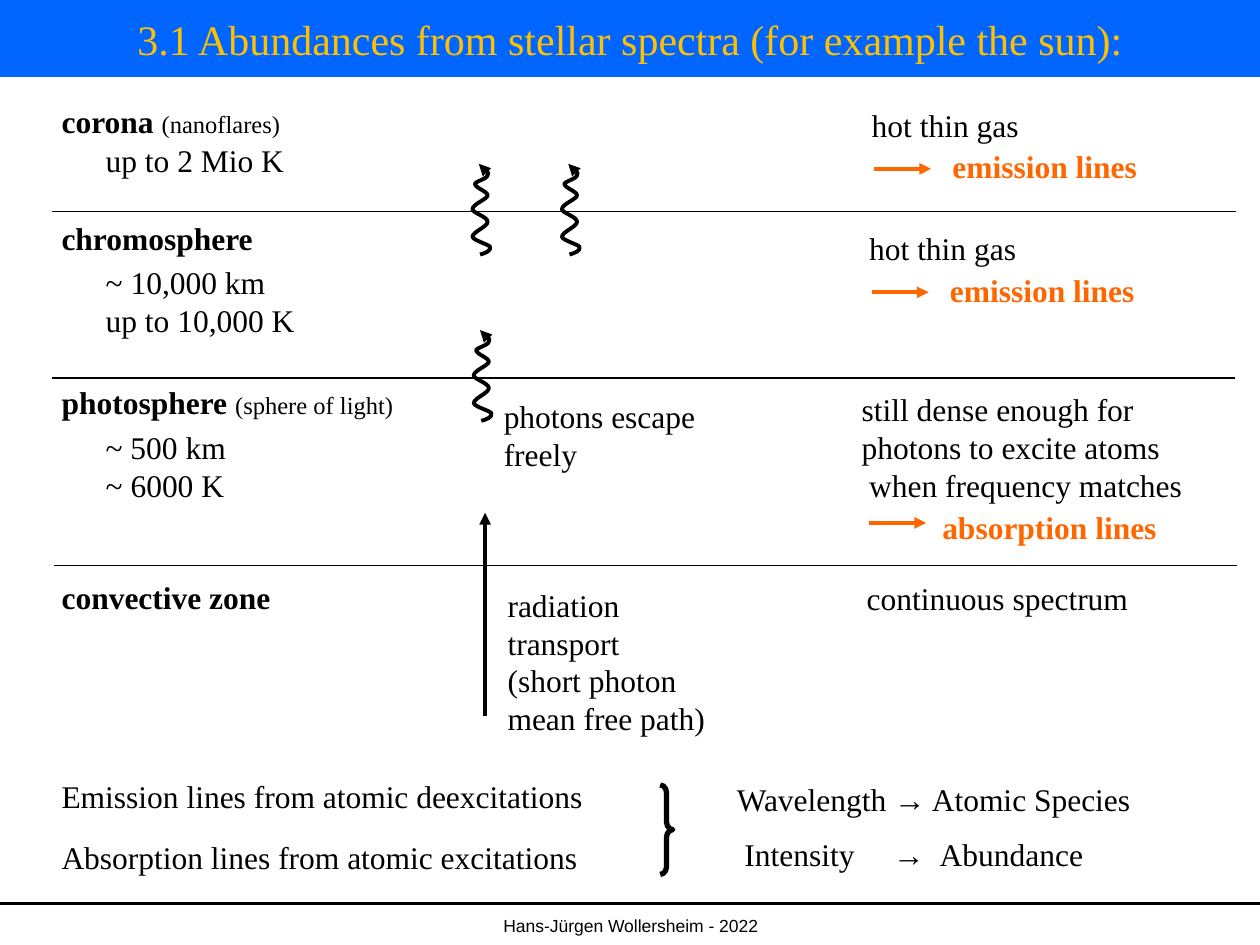
"""Build the slide on abundances from stellar spectra."""
from typing import NamedTuple

from lxml.etree import SubElement
from pptx import Presentation
from pptx.dml.color import RGBColor
from pptx.enum.shapes import MSO_CONNECTOR, MSO_SHAPE
from pptx.enum.text import MSO_ANCHOR, MSO_AUTO_SIZE, PP_ALIGN
from pptx.oxml.ns import qn
from pptx.util import Inches, Pt

SERIF = "Times New Roman"
BLACK, ORANGE = "000000", "FF6600"


class Label(NamedTuple):
    left: float
    top: float
    width: float
    text: str
    bold: bool = False
    color: str = BLACK
    note: str = ""


class Rule(NamedTuple):
    x1: float
    y1: float
    x2: float
    y2: float
    width: float = 0.75
    color: str = BLACK
    arrow: bool = False


LABELS = [
    Label(0.39, 0.76, 1.95, "corona ", True, note="(nanoflares)"),
    Label(0.39, 1.69, 1.74, "chromosphere", True),
    Label(0.39, 2.99, 2.92, "photosphere ", True, note="(sphere of light)"),
    Label(0.39, 4.54, 1.88, "convective zone", True),
    Label(0.74, 1.07, 1.67, "up to 2 Mio K"),
    Label(0.74, 2.04, 1.72, "~ 10,000 km\nup to 10,000 K"),
    Label(0.74, 3.35, 1.17, "~ 500 km"),
    Label(0.74, 3.65, 1.15, "~ 6000 K"),
    Label(3.9, 3.1, 1.74, "photons escape\vfreely"),
    Label(3.93, 4.6, 1.79, "radiation\vtransport\v(short photon\vmean free path)"),
    Label(6.82, 0.79, 1.38, "hot thin gas"),
    Label(7.46, 1.12, 1.68, "emission lines", True, ORANGE),
    Label(6.8, 1.77, 1.38, "hot thin gas"),
    Label(7.44, 2.1, 1.68, "emission lines", True, ORANGE),
    Label(7.38, 3.98, 1.92, "absorption lines", True, ORANGE),
    Label(6.78, 4.55, 2.3, "continuous spectrum"),
    Label(0.39, 6.12, 4.38, "Emission lines from atomic deexcitations"),
    Label(0.39, 6.6, 4.34, "Absorption lines from atomic excitations"),
    Label(5.75, 6.14, 3.36, "Wavelength → Atomic Species"),
]
DENSE = Label(6.74, 3.05, 2.78, "still dense enough for\vphotons to excite atoms\nwhen frequency matches")
YIELD = Label(5.81, 6.58, 2.92, "Intensity\t→\tAbundance")

RULES = [
    Rule(0, 7.17, 10, 7.17, 1.5),
    Rule(0.41, 1.68, 9.81, 1.68),
    Rule(0.41, 3, 9.8, 3),
    Rule(0.43, 4.49, 9.82, 4.49),
    Rule(3.85, 5.68, 3.85, 4.07, 2.25, arrow=True),
    Rule(6.94, 1.34, 7.39, 1.34, 2.25, ORANGE, True),
    Rule(6.92, 2.32, 7.37, 2.32, 2.25, ORANGE, True),
    Rule(6.9, 4.15, 7.35, 4.15, 2.25, ORANGE, True),
]

WAVES = [(3.76, 2.62), (3.75, 1.3), (4.46, 1.3)]
CURVE = [
    (0.06, 0.72), (0.1, 0.71), (0.15, 0.69), (0.14, 0.66),
    (0.13, 0.64), (0.01, 0.61), (0, 0.58),
    (0, 0.54), (0.12, 0.5), (0.12, 0.46),
    (0.12, 0.42), (0, 0.39), (0, 0.36),
    (0, 0.32), (0.12, 0.28), (0.12, 0.25),
    (0.12, 0.22), (0.02, 0.19), (0.02, 0.16),
    (0.02, 0.14), (0.12, 0.12), (0.12, 0.09),
    (0.13, 0.06), (0.06, 0.03), (0.05, 0),
]


def rgb(code: str) -> RGBColor:
    return RGBColor.from_string(code)


def style(font, size: float, color: str = BLACK, name: str = SERIF, bold: bool = False) -> None:
    font.size, font.name, font.bold = Pt(size), name, bold
    font.color.rgb = rgb(color)


def stroke(shape, width: float, color: str = BLACK, arrow: bool = False) -> None:
    shape.line.width = Pt(width)
    shape.line.color.rgb = rgb(color)
    if arrow:
        SubElement(shape.line._get_or_add_ln(), qn("a:tailEnd"), type="triangle")


def add_label(slide, label: Label):
    lines = sum(label.text.count(mark) for mark in "\n\v")
    box = slide.shapes.add_textbox(
        Inches(label.left), Inches(label.top), Inches(label.width), Inches(0.4 + 0.3 * lines))
    frame = box.text_frame
    frame.word_wrap = False
    frame.auto_size = MSO_AUTO_SIZE.SHAPE_TO_FIT_TEXT
    frame.text = label.text
    if label.note:
        head = frame.paragraphs[0]
        style(head.runs[0].font, 18, label.color, bold=label.bold)
        run = head.add_run()
        run.text = label.note
        style(run.font, 14, label.color)
    else:
        for para in frame.paragraphs:
            style(para.font, 18, label.color, bold=label.bold)
    return frame


def add_rule(slide, rule: Rule) -> None:
    line = slide.shapes.add_connector(
        MSO_CONNECTOR.STRAIGHT,
        Inches(rule.x1), Inches(rule.y1), Inches(rule.x2), Inches(rule.y2))
    stroke(line, rule.width, rule.color, rule.arrow)
    SubElement(line._element.spPr, qn("a:effectLst"))


def bend(shape) -> None:
    """Turn each three line segments into one cubic curve."""
    track = next(shape._element.iter(qn("a:path")))
    parts = track.findall(qn("a:lnTo"))
    for i in range(0, len(parts), 3):
        curve = SubElement(track, qn("a:cubicBezTo"))
        for part in parts[i:i + 3]:
            curve.append(part[0])
            track.remove(part)


def add_wave(slide, left: float, top: float) -> None:
    first, *rest = [(Inches(left + x), Inches(top + y)) for x, y in CURVE]
    pen = slide.shapes.build_freeform(*first)
    pen.add_line_segments(rest, close=False)
    wave = pen.convert_to_shape()
    bend(wave)
    wave.fill.background()
    wave.shadow.inherit = False
    stroke(wave, 2.25, arrow=True)


def add_title(slide) -> None:
    title = slide.shapes.title
    title.left, title.top, title.width, title.height = 0, 0, Inches(10), Inches(0.61)
    title.fill.solid()
    title.fill.fore_color.rgb = rgb("0066FF")
    frame = title.text_frame
    frame.text = "3.1 Abundances from stellar spectra (for example the sun):"
    frame.vertical_anchor = MSO_ANCHOR.MIDDLE
    para = frame.paragraphs[0]
    para.alignment = PP_ALIGN.CENTER
    style(para.font, 24, "FFC000")


def add_foot(slide) -> None:
    box = slide.shapes.add_textbox(Inches(0.01), Inches(7.21), Inches(9.99), Inches(0.29))
    box.text_frame.word_wrap = True
    para = box.text_frame.paragraphs[0]
    para.text = "Hans-Jürgen Wollersheim - 2022"
    para.alignment = PP_ALIGN.CENTER
    style(para.font, 10, name="Arial")


def add_brace(slide) -> None:
    brace = slide.shapes.add_shape(
        MSO_SHAPE.RIGHT_BRACE, Inches(5.24), Inches(6.23), Inches(0.1), Inches(0.71))
    brace.adjustments[0] = 0.61
    brace.fill.background()
    brace.shadow.inherit = False
    stroke(brace, 3)


def main() -> None:
    deck = Presentation()
    deck.slide_width, deck.slide_height = Inches(10), Inches(7.5)
    slide = deck.slides.add_slide(deck.slide_layouts[5])
    add_title(slide)
    add_foot(slide)
    for rule in RULES:
        add_rule(slide, rule)
    for left, top in WAVES:
        add_wave(slide, left, top)
    for label in LABELS:
        add_label(slide, label)
    last = add_label(slide, DENSE).paragraphs[-1]
    last._p.get_or_add_pPr().set("marL", str(Inches(0.06)))
    props = add_label(slide, YIELD).paragraphs[0]._p.get_or_add_pPr()
    tabs = props.makeelement(qn("a:tabLst"))
    props.insert(0, tabs)
    for stop in (1.18, 1.55):
        SubElement(tabs, qn("a:tab"), pos=str(Inches(stop)), algn="l")
    add_brace(slide)
    deck.save("out.pptx")


if __name__ == "__main__":
    main()
